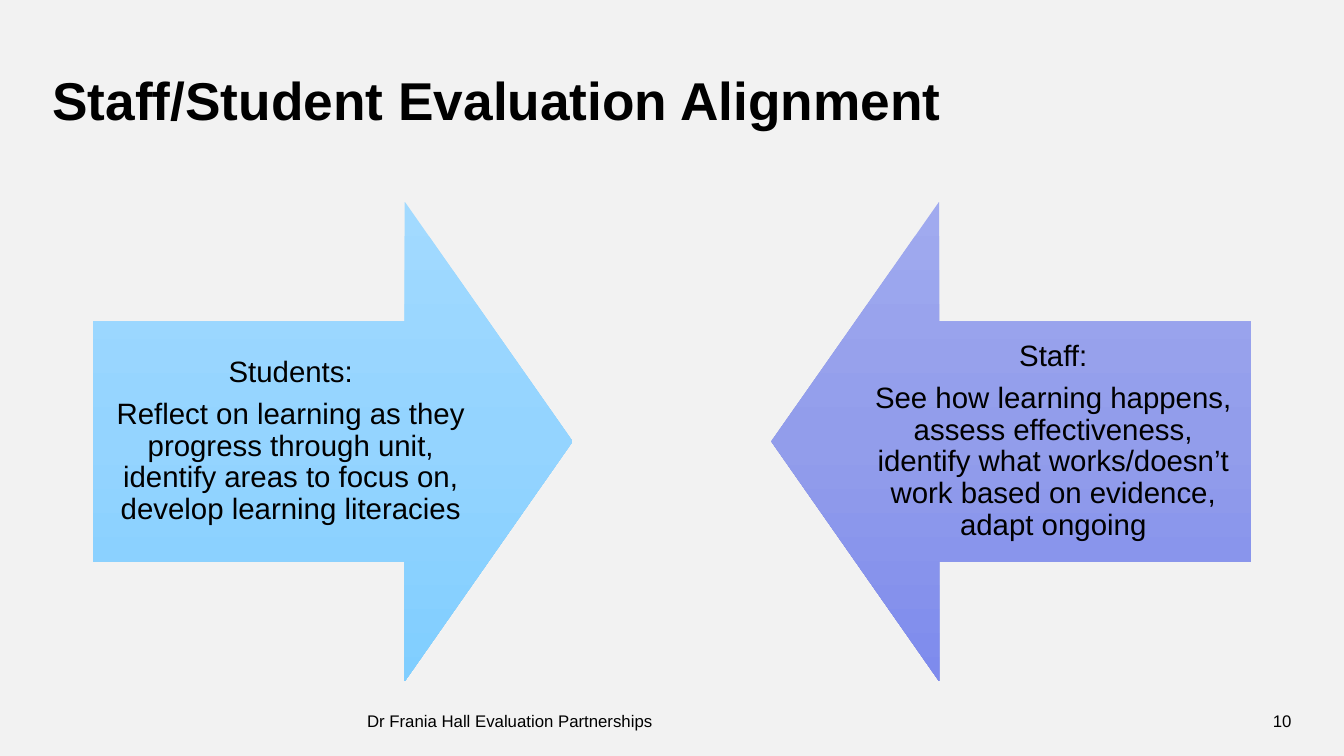
from copy import deepcopy

from pptx import Presentation
from pptx import util as u
from pptx.dml.color import RGBColor
from pptx.enum import shapes, text
from pptx.oxml.ns import qn

BACKGROUND = RGBColor(0xF2, 0xF2, 0xF2)
BLACK = RGBColor(0x00, 0x00, 0x00)
BLUES = [RGBColor(0xA2, 0xDA, 0xFF), RGBColor(0x94, 0xD4, 0xFF), RGBColor(0x80, 0xCE, 0xFF)]
VIOLETS = [RGBColor(0xA0, 0xAA, 0xEF), RGBColor(0x92, 0x9D, 0xEB), RGBColor(0x7E, 0x8B, 0xED)]

W, H = 13.33, 7.5
ARROW = 4.76
ARROW_TOP = 2
ARROW_MARGIN = 0.92

ALIGN = text.PP_ALIGN
ANCHOR = text.MSO_ANCHOR
KIND = shapes.MSO_SHAPE

TITLE_FORMAT = {"line_spacing": 0.9}
ARROW_FORMAT = {"alignment": ALIGN.CENTER, "line_spacing": 0.9, "space_after": u.Pt(7.35)}

LABELS = [
    ("Staff/Student Evaluation Alignment", (0.52, 0.56, 12.28, 0.75),
     ANCHOR.BOTTOM, TITLE_FORMAT, {"size": u.Pt(38), "bold": True}),
    ("Dr Frania Hall Evaluation Partnerships", (3.64, 6.95, 8.72, 0.4),
     ANCHOR.MIDDLE, {}, {"size": u.Pt(12)}),
    ("10", (12.36, 6.95, 0.45, 0.4),
     ANCHOR.MIDDLE, {"alignment": ALIGN.RIGHT}, {"size": u.Pt(12)}),
]

ARROWS = [
    (KIND.RIGHT_ARROW, ARROW_MARGIN, BLUES, [
        "Students:",
        "Reflect on learning as they progress through unit, "
        "identify areas to focus on, develop learning literacies",
    ]),
    (KIND.LEFT_ARROW, W - ARROW_MARGIN - ARROW, VIOLETS, [
        "Staff:",
        "See how learning happens, assess effectiveness, identify what "
        "works/doesn’t work based on evidence, adapt ongoing",
    ]),
]


def apply(target, values):
    for name, value in values.items():
        setattr(target, name, value)


def write(tf, lines, inset, anchor, paragraph_format, font_format):
    apply(tf, {"word_wrap": True, "vertical_anchor": anchor})
    apply(tf, {f"margin_{side}": u.Inches(inset) for side in ("left", "top", "right", "bottom")})
    for i, line in enumerate(lines):
        p = tf.add_paragraph() if i else tf.paragraphs[0]
        apply(p, paragraph_format)
        r = p.add_run()
        r.text = line
        apply(r.font, {"name": "Arial", **font_format})
        r.font.color.rgb = BLACK


def fill_gradient(sp, colours):
    sp.fill.gradient()
    sp.fill.gradient_angle = 270
    stops = sp._element.spPr.find(".//" + qn("a:gsLst"))
    while len(stops) < len(colours):
        stops.append(deepcopy(stops[0]))
    for i, (stop, colour) in enumerate(zip(sp.fill.gradient_stops, colours)):
        stop.position = i / (len(colours) - 1)
        stop.color.rgb = colour


def add_arrow(s, kind, left, colours, lines):
    sp = s.shapes.add_shape(kind, *map(u.Inches, (left, ARROW_TOP, ARROW, ARROW)))
    sp.adjustments[0], sp.adjustments[1] = 0.5, 0.35
    sp.shadow.inherit = False
    sp.line.fill.background()
    fill_gradient(sp, colours)
    write(sp.text_frame, lines, 0.16, ANCHOR.MIDDLE, ARROW_FORMAT, {"size": u.Pt(21)})


def main():
    prs = Presentation()
    prs.slide_width, prs.slide_height = u.Inches(W), u.Inches(H)
    s = prs.slides.add_slide(prs.slide_layouts[6])
    s.background.fill.solid()
    s.background.fill.fore_color.rgb = BACKGROUND
    for arrow in ARROWS:
        add_arrow(s, *arrow)
    for line, box, anchor, paragraph_format, font_format in LABELS:
        sp = s.shapes.add_textbox(*map(u.Inches, box))
        write(sp.text_frame, [line], 0, anchor, paragraph_format, font_format)
    prs.save("out.pptx")


if __name__ == "__main__":
    main()
